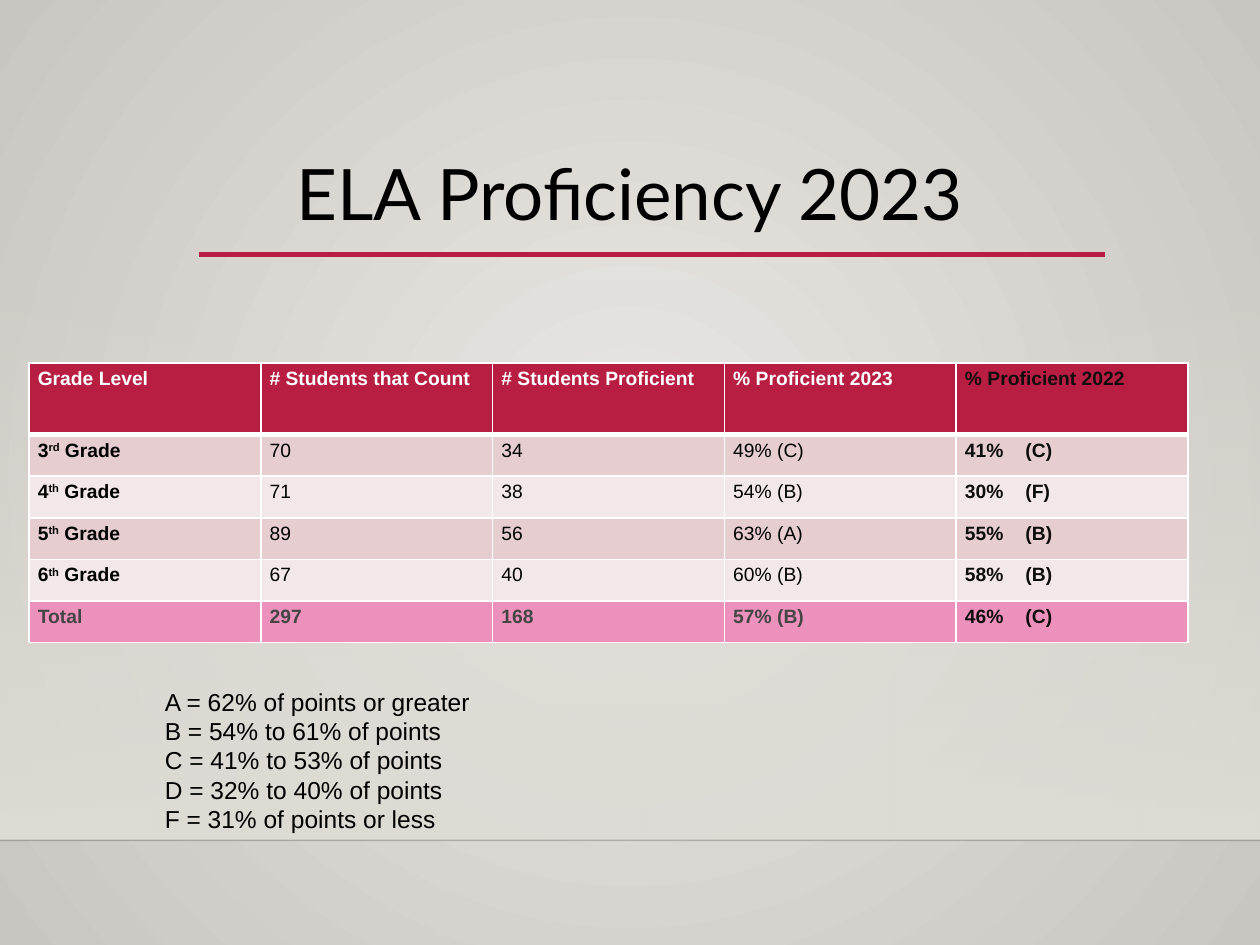
from lxml import etree
from pptx import Presentation
from pptx.dml.color import RGBColor
from pptx.enum.shapes import MSO_CONNECTOR, MSO_SHAPE
from pptx.enum.text import MSO_ANCHOR, PP_ALIGN
from pptx.oxml import parse_xml
from pptx.oxml.ns import qn
from pptx.util import Inches, Pt

STRAIGHT, RECT = MSO_CONNECTOR.STRAIGHT, MSO_SHAPE.RECTANGLE
CENTER, TOP = PP_ALIGN.CENTER, MSO_ANCHOR.TOP
NS = 'xmlns:a="http://schemas.openxmlformats.org/drawingml/2006/main"'

COLORS = {
    "bg_inner": "EBE9E6", "bg_outer": "C9C5C0", "floor": "DFDBD5",
    "accent": "B71E42", "floor_line": "000001", "border": "FFFFFF",
    "band_dark": "E6CDCF", "band_light": "F3E8E9", "total": "EB91BB",
    "white": "FFFFFF", "black": "000000", "near_black": "0D0D0D", "gray": "454545",
}
RGB = {name: RGBColor.from_string(value) for name, value in COLORS.items()}

HEADERS = ["Grade Level", "# Students that Count", "# Students Proficient",
           "% Proficient 2023", "% Proficient 2022"]
ROWS = [
    ["3rd Grade", "70", "34", "49% (C)", "41%\t(C)"],
    ["4th Grade", "71", "38", "54% (B)", "30%\t(F)"],
    ["5th Grade", "89", "56", "63% (A)", "55%\t(B)"],
    ["6th Grade", "67", "40", "60% (B)", "58%\t(B)"],
    ["Total", "297", "168", "57% (B)", "46%\t(C)"],
]
SCALE = ["A = 62% of points or greater", "B = 54% to 61% of points",
         "C = 41% to 53% of points", "D = 32% to 40% of points",
         "F = 31% of points or less"]


def style_run(r, size, color, bold=False, name="Arial"):
    r.font.size, r.font.name, r.font.bold = Pt(size), name, bold
    r.font.color.rgb = RGB[color]


def add_line(shapes, x1, x2, y, color, width):
    line = shapes.add_connector(STRAIGHT, Inches(x1), Inches(y), Inches(x2), Inches(y))
    line.line.color.rgb = RGB[color]
    line.line.width = Pt(width)
    etree.SubElement(line._element.spPr, qn("a:effectLst"))
    return line


prs = Presentation()
prs.slide_width, prs.slide_height = Inches(10), Inches(7.5)
s = prs.slides.add_slide(prs.slide_layouts[5])
shapes = s.shapes

# Background: radial gradient
fill = s.background.fill
fill.gradient()
for stop, color, pos in zip(fill.gradient_stops, ("bg_inner", "bg_outer"), (0, 1)):
    stop.color.rgb, stop.position = RGB[color], pos
lin = s.background._cSld.find(".//" + qn("a:lin"))
lin.getparent().replace(lin, parse_xml(
    f'<a:path {NS} path="circle">'
    '<a:fillToRect l="50000" t="50000" r="50000" b="50000"/></a:path>'))

# Fade down to the floor line
fade = shapes.add_shape(RECT, 0, Inches(2.2), Inches(10), Inches(4.46))
fade.shadow.inherit = False
fade.line.fill.background()
fade.fill.gradient()
fade.fill.gradient_angle = 270
for stop, pos in zip(fade.fill.gradient_stops, (0, 1)):
    stop.color.rgb, stop.position = RGB["floor"], pos
first = fade._element.spPr.find(".//" + qn("a:srgbClr"))
etree.SubElement(first, qn("a:alpha"), val="0")

floor = add_line(shapes, 0, 10, 6.67, "floor_line", 1)
floor_color = floor._element.spPr.find(".//" + qn("a:srgbClr"))
etree.SubElement(floor_color, qn("a:alpha"), val="20000")
add_line(shapes, 1.58, 8.77, 2.02, "accent", 2.5)

# Title, in front of the rule
title = shapes.title
shapes._spTree.append(title._element)
title.left, title.top, title.width, title.height = map(Inches, (1.1, 1.21, 7.8, 1.01))
tf = title.text_frame
tf.text = "ELA Proficiency 2023"
tf.vertical_anchor = TOP
p = tf.paragraphs[0]
p.alignment, p.line_spacing = CENTER, 0.9
style_run(p.runs[0], 40.5, "black", name="Lato")

# Proficiency table
table = shapes.add_table(len(ROWS) + 1, len(HEADERS), Inches(0.23), Inches(2.88),
                         Inches(9.2), Inches(2.23)).table
for col in table.columns:
    col.width = Inches(1.84)
for i, row in enumerate(table.rows):
    row.height = Inches(0.33 if i else 0.57)

last = len(ROWS)
for i, values in enumerate([HEADERS] + ROWS):
    if i == 0:
        band, text_color = "accent", "white"
    elif i == last:
        band, text_color = "total", "gray"
    else:
        band, text_color = "band_dark" if i % 2 else "band_light", "black"
    for j, value in enumerate(values):
        cell = table.cell(i, j)
        cell.margin_left = cell.margin_right = Inches(0.07)
        cell.margin_top = cell.margin_bottom = Inches(0.04)
        cell.fill.solid()
        cell.fill.fore_color.rgb = RGB[band]
        tcPr = cell._tc.get_or_add_tcPr()
        for k, side in enumerate("LRTB"):
            thick = (i, side) in ((0, "B"), (1, "T"))
            tcPr.insert(k, parse_xml(
                f'<a:ln{side} {NS} w="{Pt(3 if thick else 1)}"><a:solidFill>'
                f'<a:srgbClr val="{COLORS["border"]}"/></a:solidFill></a:ln{side}>'))

        p = cell.text_frame.paragraphs[0]
        if "\t" in value:
            p._p.get_or_add_pPr().append(parse_xml(
                f'<a:tabLst {NS}><a:tab pos="{Inches(0.48)}" algn="l"/></a:tabLst>'))
        is_grade = j == 0 and 0 < i < last
        parts = [value[0], value[1:3], value[3:]] if is_grade else [value]
        bold = i in (0, last) or j in (0, 4)
        for k, part in enumerate(parts):
            r = p.add_run()
            r.text = part
            style_run(r, 11, "near_black" if j == 4 else text_color, bold)
            if k == 1:
                r.font._element.set("baseline", "30000")

# Grading scale
tf = shapes.add_textbox(Inches(1.21), Inches(5.4), Inches(5), Inches(1.28)).text_frame
tf.word_wrap = True
tf.text = "\n".join(SCALE)
for p in tf.paragraphs:
    style_run(p.runs[0], 14, "black")

prs.save("out.pptx")
